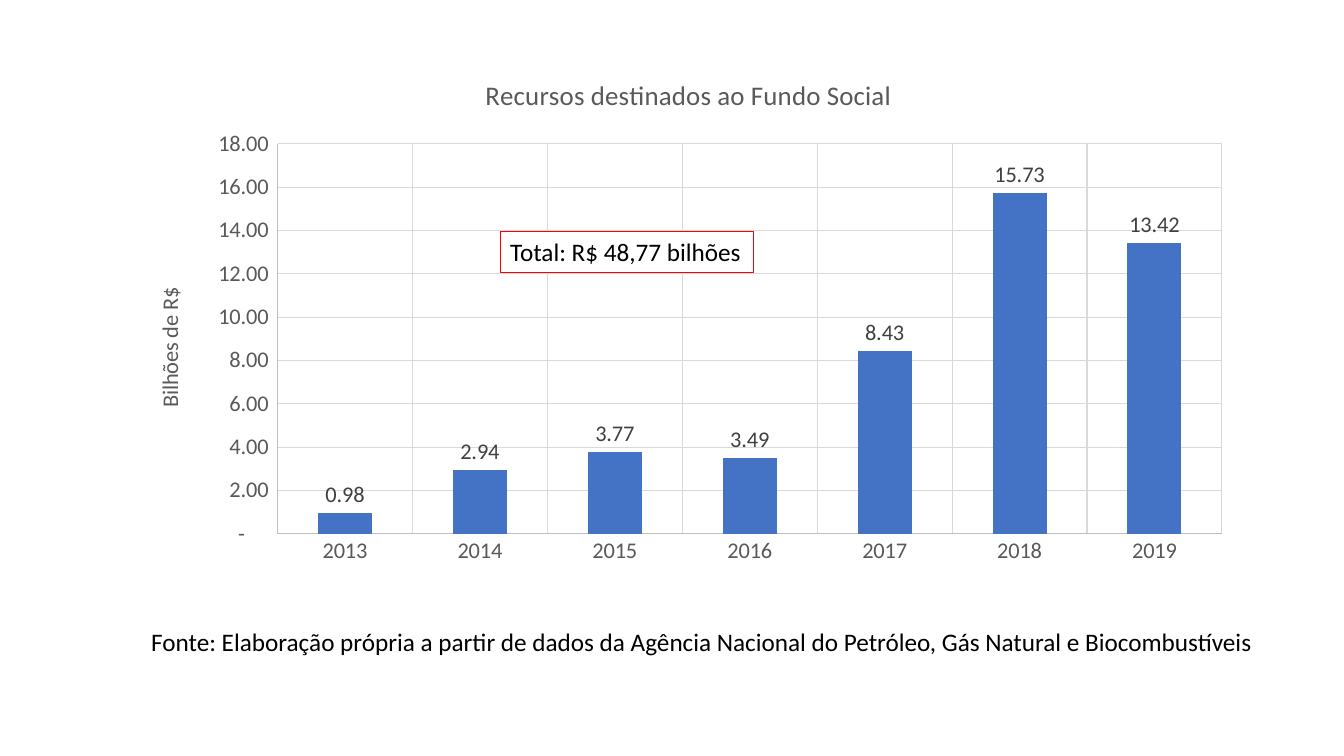
import pptx
import pptx.chart.data
import pptx.dml.color
import pptx.enum.chart
import pptx.enum.shapes
import pptx.enum.text
import pptx.oxml
import pptx.oxml.ns
import pptx.util

WIDTH, HEIGHT = 13.33, 7.5
FONT = "Calibri"
COLORS = {
    "bar": "4472C4",
    "grid": "D9D9D9",
    "axis": "BFBFBF",
    "muted": "595959",
    "label": "404040",
    "text": "000000",
    "paper": "FFFFFF",
    "alert": "FF0000",
}
FUND_BY_YEAR = {
    "2013": 0.98,
    "2014": 2.94,
    "2015": 3.77,
    "2016": 3.49,
    "2017": 8.43,
    "2018": 15.73,
    "2019": 13.42,
}
PLOT_SHARES = {"x": 0.13, "y": 0.17, "w": 0.85, "h": 0.75}


def color(name):
    return pptx.dml.color.RGBColor.from_string(COLORS[name])


def set_values(target, values):
    for name, value in values.items():
        setattr(target, name, value)


def set_font(font, size, color_name):
    set_values(font, {"name": FONT, "size": pptx.util.Pt(size), "bold": False})
    font.color.rgb = color(color_name)


def set_line(line, color_name):
    line.color.rgb = color(color_name)
    line.width = pptx.util.Pt(0.75)


def set_title(owner, text, size):
    frame = owner.text_frame
    frame.text = text
    set_font(frame.paragraphs[0].runs[0].font, size, "muted")


def place_plot(chart):
    plot_area = chart._chartSpace.chart.plotArea
    for old_layout in plot_area.findall(pptx.oxml.ns.qn("c:layout")):
        plot_area.remove(old_layout)
    shares = "".join(f'<c:{side} val="{share}"/>' for side, share in PLOT_SHARES.items())
    plot_area.insert(0, pptx.oxml.parse_xml(
        f'<c:layout {pptx.oxml.ns.nsdecls("c")}><c:manualLayout>'
        '<c:layoutTarget val="inner"/><c:xMode val="edge"/><c:yMode val="edge"/>'
        f'{shares}</c:manualLayout></c:layout>'))


def add_fund_chart(page, box):
    data = pptx.chart.data.CategoryChartData()
    data.categories = list(FUND_BY_YEAR)
    data.add_series("Fundo Social", list(FUND_BY_YEAR.values()))
    chart = page.shapes.add_chart(
        pptx.enum.chart.XL_CHART_TYPE.COLUMN_CLUSTERED,
        *map(pptx.util.Inches, box), data).chart
    set_font(chart.font, 16, "text")
    chart.has_legend = False
    set_title(chart.chart_title, "Recursos destinados ao Fundo Social", 19.2)
    chart.chart_title.include_in_layout = False

    for axis in (chart.category_axis, chart.value_axis):
        set_values(axis, {
            "has_major_gridlines": True,
            "major_tick_mark": pptx.enum.chart.XL_TICK_MARK.NONE,
            "minor_tick_mark": pptx.enum.chart.XL_TICK_MARK.NONE,
        })
        set_font(axis.tick_labels.font, 16, "muted")
        set_line(axis.format.line, "axis")
        set_line(axis.major_gridlines.format.line, "grid")

    set_values(chart.value_axis, {"minimum_scale": 0, "maximum_scale": 18, "major_unit": 2})
    set_values(chart.value_axis.tick_labels, {
        "number_format": '_(* #,##0.00_);_(* \\(#,##0.00\\);_(* "-"??_);_(@_)',
        "number_format_is_linked": False,
    })
    set_title(chart.value_axis.axis_title, "Bilhões de R$", 16)

    plot = chart.plots[0]
    set_values(plot, {"gap_width": 150, "vary_by_categories": False})
    series = plot.series[0]
    series.format.fill.solid()
    series.format.fill.fore_color.rgb = color("bar")
    labels = series.data_labels
    set_values(labels, {
        "show_value": True,
        "position": pptx.enum.chart.XL_LABEL_POSITION.OUTSIDE_END,
        "number_format": "0.00",
        "number_format_is_linked": False,
    })
    set_font(labels.font, 16, "label")
    place_plot(chart)


def write_text(shape, text):
    frame = shape.text_frame
    set_values(frame, {
        "word_wrap": True,
        "auto_size": pptx.enum.text.MSO_AUTO_SIZE.SHAPE_TO_FIT_TEXT,
        "vertical_anchor": pptx.enum.text.MSO_ANCHOR.TOP,
    })
    para = frame.paragraphs[0]
    para.alignment = pptx.enum.text.PP_ALIGN.LEFT
    span = para.add_run()
    span.text = text
    set_font(span.font, 18, "text")


def add_source_note(page, box):
    note = page.shapes.add_textbox(*map(pptx.util.Inches, box))
    write_text(note, "Fonte: Elaboração própria a partir de dados da Agência Nacional "
                     "do Petróleo, Gás Natural e Biocombustíveis")


def add_total_box(page, box):
    total = page.shapes.add_shape(
        pptx.enum.shapes.MSO_SHAPE.RECTANGLE, *map(pptx.util.Inches, box))
    total.shadow.inherit = False
    total.fill.solid()
    total.fill.fore_color.rgb = color("paper")
    set_line(total.line, "alert")
    write_text(total, "Total: R$ 48,77 bilhões")


def main():
    deck = pptx.Presentation()
    set_values(deck, {
        "slide_width": pptx.util.Inches(WIDTH),
        "slide_height": pptx.util.Inches(HEIGHT),
    })
    page = deck.slides.add_slide(deck.slide_layouts[6])
    add_fund_chart(page, (1.32, 0.55, 11.02, 5.16))
    add_source_note(page, (1.4, 6.16, 11.19, 0.4))
    add_total_box(page, (4.96, 2.3, 2.51, 0.4))
    deck.save("out.pptx")


if __name__ == "__main__":
    main()
